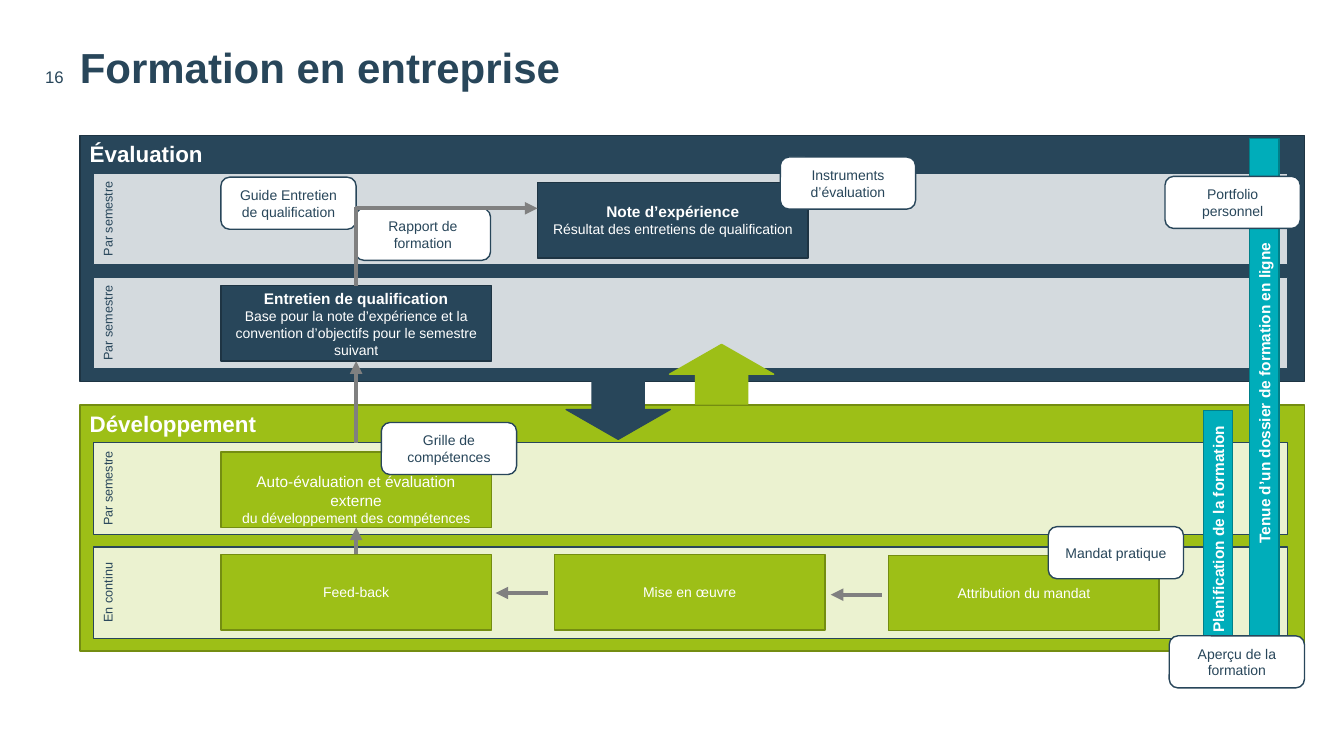
from dataclasses import dataclass

from lxml import etree
from pptx import Presentation
from pptx.dml.color import RGBColor
from pptx.enum.shapes import MSO_CONNECTOR, MSO_SHAPE
from pptx.enum.text import MSO_ANCHOR, MSO_AUTO_SIZE, PP_ALIGN
from pptx.oxml.ns import qn
from pptx.util import Emu, Pt

RECT, ROUND, DOWN = MSO_SHAPE.RECTANGLE, MSO_SHAPE.ROUNDED_RECTANGLE, MSO_SHAPE.DOWN_ARROW
TOP, MIDDLE, BOTTOM = MSO_ANCHOR.TOP, MSO_ANCHOR.MIDDLE, MSO_ANCHOR.BOTTOM
LEFT, CENTER, RIGHT = PP_ALIGN.LEFT, PP_ALIGN.CENTER, PP_ALIGN.RIGHT
STRAIGHT = MSO_CONNECTOR.STRAIGHT
NO_FIT = MSO_AUTO_SIZE.NONE

COLUMNS, ROWS = 160, 90
SLIDE_WIDTH, SLIDE_HEIGHT = Emu(12192000), Emu(6858000)
SIDE_TOP, SIDE_BOTTOM = 0, 2
PANEL_LEFT, PANEL_WIDTH, PANEL_HEIGHT = 9.5, 145.8, 29.3
BAND_LEFT, BAND_WIDTH, BAND_HEIGHT = 11.1, 142.2, 10.9
BAND_OFFSETS = (4.5, 16.9)
BOX_WIDTH, BOX_HEIGHT = 32.2, 9
TAG_WIDTH, TAG_HEIGHT = 16.1, 6.2
STEP_LEFT, STEP_MIDDLE = 26.3, 42.4


@dataclass(frozen=True)
class Theme:
    font: str = "Arial"
    navy: str = "28465A"
    navy_edge: str = "1E3443"
    green: str = "9DBF17"
    green_edge: str = "748D11"
    teal: str = "00ADBA"
    teal_edge: str = "00808A"
    white: str = "FFFFFF"
    gray: str = "808080"
    title: int = 30
    heading: int = 16
    number: int = 12
    strong: int = 11
    body: int = 10
    label: int = 9
    edge: int = 1
    arrow: int = 3


THEME = Theme()
NAVY = (THEME.navy, THEME.navy_edge)
GREEN = (THEME.green, THEME.green_edge)


def color(code):
    return RGBColor.from_string(code)


def across(columns):
    return Emu(round(columns * SLIDE_WIDTH / COLUMNS))


def down(rows):
    return Emu(round(rows * SLIDE_HEIGHT / ROWS))


def place(left, top, width, height):
    return across(left), down(top), across(width), down(height)


def write(shape, lines, ink, align=CENTER, anchor=MIDDLE, spacing=None):
    frame = shape.text_frame
    frame.word_wrap = True
    frame.auto_size = NO_FIT
    frame.vertical_anchor = anchor
    for index, (text, size, bold) in enumerate(lines):
        para = frame.add_paragraph() if index else frame.paragraphs[0]
        para.alignment = align
        if spacing:
            para.line_spacing = Pt(spacing)
        span = para.add_run()
        span.text = text
        span.font.name = THEME.font
        span.font.size = Pt(size)
        span.font.bold = bold
        span.font.color.rgb = color(ink)


def clear_margins(shape):
    frame = shape.text_frame
    frame.margin_left = frame.margin_right = frame.margin_top = frame.margin_bottom = 0


def add_block(page, kind, area, colors, turn=0):
    fill, edge = colors
    block = page.shapes.add_shape(kind, *place(*area))
    block.shadow.inherit = False
    block.fill.solid()
    block.fill.fore_color.rgb = color(fill)
    block.line.color.rgb = color(edge)
    block.line.width = Pt(THEME.edge)
    block.rotation = turn
    return block


def add_title(page, text, number):
    title = page.shapes.title
    title.left, title.top, title.width, title.height = place(9.5, 5.6, 145.8, 7.6)
    clear_margins(title)
    write(title, [(text, THEME.title, True)], THEME.navy, LEFT, TOP, 32)
    box = page.shapes.add_textbox(*place(0, 7.8, 7.6, 2.5))
    clear_margins(box)
    write(box, [(number, THEME.number, False)], THEME.navy, RIGHT, BOTTOM, 18)


def add_band(page, top, period):
    band = add_block(page, RECT, (BAND_LEFT, top, BAND_WIDTH, BAND_HEIGHT), (THEME.white, THEME.navy))
    tint = band.fill._xPr.find(qn("a:solidFill"))[0]
    etree.SubElement(tint, qn("a:alpha")).set("val", "80000")
    width, height = 17, 3
    label = page.shapes.add_textbox(*place(12.8 - width / 2, top + (BAND_HEIGHT - height) / 2, width, height))
    label.rotation = 270
    write(label, [(period, THEME.label, False)], THEME.navy, anchor=TOP)


def add_panel(page, top, heading, colors, periods):
    panel = add_block(page, RECT, (PANEL_LEFT, top, PANEL_WIDTH, PANEL_HEIGHT), colors)
    write(panel, [(heading, THEME.heading, True)], THEME.white, LEFT, TOP)
    for offset, period in zip(BAND_OFFSETS, periods):
        add_band(page, top + offset, period)


def add_upright_bar(page, middle, center, length, text):
    height = 3.5
    area = (middle - length / 2, center - height / 2, length, height)
    bar = add_block(page, RECT, area, (THEME.teal, THEME.teal_edge), 270)
    write(bar, [(text, THEME.strong, True)], THEME.white)


def add_step(page, left, top, colors, lines):
    step = add_block(page, RECT, (left, top, BOX_WIDTH, BOX_HEIGHT), colors)
    write(step, lines, THEME.white)
    return step


def add_tag(page, left, top, text):
    tag = add_block(page, ROUND, (left, top, TAG_WIDTH, TAG_HEIGHT), (THEME.white, THEME.navy))
    write(tag, [(text, THEME.body, False)], THEME.navy)


def add_line(page, start, end, head=True, source=None, target=None):
    points = (across(start[0]), down(start[1]), across(end[0]), down(end[1]))
    line = page.shapes.add_connector(STRAIGHT, *points)
    if source:
        line.begin_connect(*source)
    if target:
        line.end_connect(*target)
    line.line.color.rgb = color(THEME.gray)
    line.line.width = Pt(THEME.arrow)
    if head:
        etree.SubElement(line.line._get_or_add_ln(), qn("a:tailEnd")).set("type", "triangle")
    etree.SubElement(line._element.spPr, qn("a:effectLst"))


def main():
    deck = Presentation()
    deck.slide_width, deck.slide_height = SLIDE_WIDTH, SLIDE_HEIGHT
    page = deck.slides.add_slide(deck.slide_layouts[5])
    add_title(page, "Formation en entreprise", "16")

    add_panel(page, 16.1, "Évaluation", NAVY, ("Par semestre", "Par semestre"))
    add_panel(page, 48.2, "Développement", GREEN, ("Par semestre", "En continu"))
    add_upright_bar(page, 150.5, 46.8, 60.7, "Tenue d’un dossier de formation en ligne")
    add_upright_bar(page, 145, 63, 28.3, "Planification de la formation")

    interview = add_step(page, STEP_LEFT, 34, NAVY, [
        ("Entretien de qualification", THEME.strong, True),
        ("Base pour la note d’expérience et la convention d’objectifs pour le semestre suivant",
         THEME.body, False)])
    add_step(page, 64, 21.7, NAVY, [
        ("Note d’expérience", THEME.strong, True),
        ("Résultat des entretiens de qualification", THEME.body, False)])
    review = add_step(page, STEP_LEFT, 53.8, GREEN, [
        ("Auto-évaluation et évaluation externe", THEME.strong, False),
        ("du développement des compétences", THEME.body, False)])
    review.text_frame.margin_top = down(2.8)
    add_step(page, 105.8, 66.1, GREEN, [("Attribution du mandat", THEME.body, False)])
    add_step(page, 66, 66, GREEN, [("Mise en œuvre", THEME.body, False)])
    feedback = add_step(page, STEP_LEFT, 66, GREEN, [("Feed-back", THEME.body, False)])

    for left, top, text in (
        (139.2, 75.7, "Aperçu de la formation"),
        (124.8, 62.7, "Mandat pratique"),
        (45.4, 50.3, "Grille de compétences"),
        (42.3, 24.8, "Rapport de formation"),
        (26.3, 21.1, "Guide Entretien de qualification"),
        (92.9, 18.7, "Instruments d’évaluation"),
        (138.7, 21, "Portfolio personnel"),
    ):
        add_tag(page, left, top, text)

    add_line(page, (105, 70.8), (98.9, 70.8))
    add_line(page, (65.3, 70.6), (59, 70.6))
    add_line(page, (STEP_MIDDLE, 66), (STEP_MIDDLE, 62.8),
             source=(feedback, SIDE_TOP), target=(review, SIDE_BOTTOM))
    add_line(page, (STEP_MIDDLE, 52.7), (STEP_MIDDLE, 43), target=(interview, SIDE_BOTTOM))
    add_line(page, (STEP_MIDDLE, 24.8), (64, 24.8))
    add_line(page, (STEP_MIDDLE, 24.6), (STEP_MIDDLE, 34), head=False, target=(interview, SIDE_TOP))

    add_block(page, DOWN, (67.4, 45.2, 12.4, 7.1), (THEME.navy, THEME.navy))
    add_block(page, DOWN, (79.7, 41, 12.4, 7.1), (THEME.green, THEME.green), 180)
    deck.save("out.pptx")


if __name__ == "__main__":
    main()
